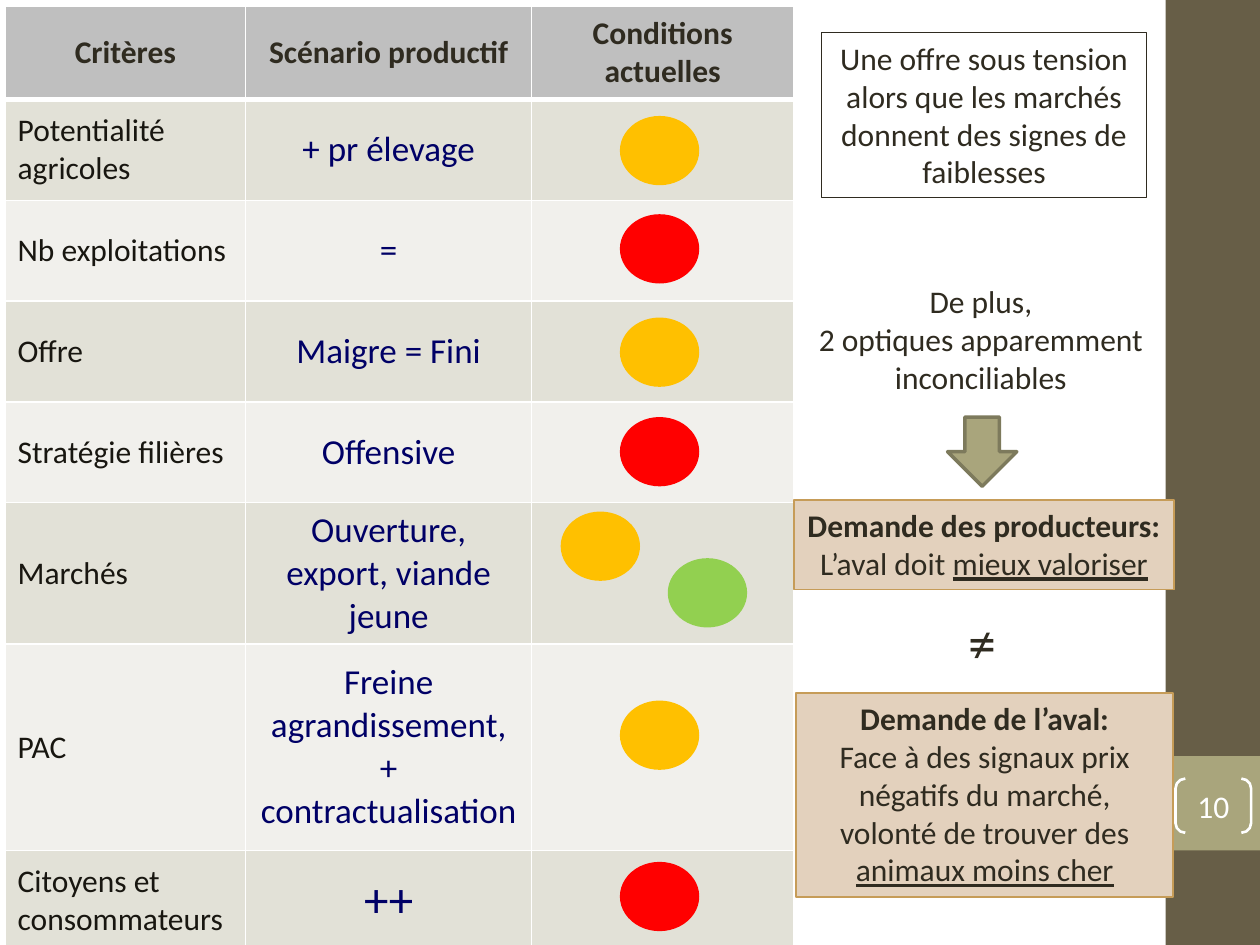
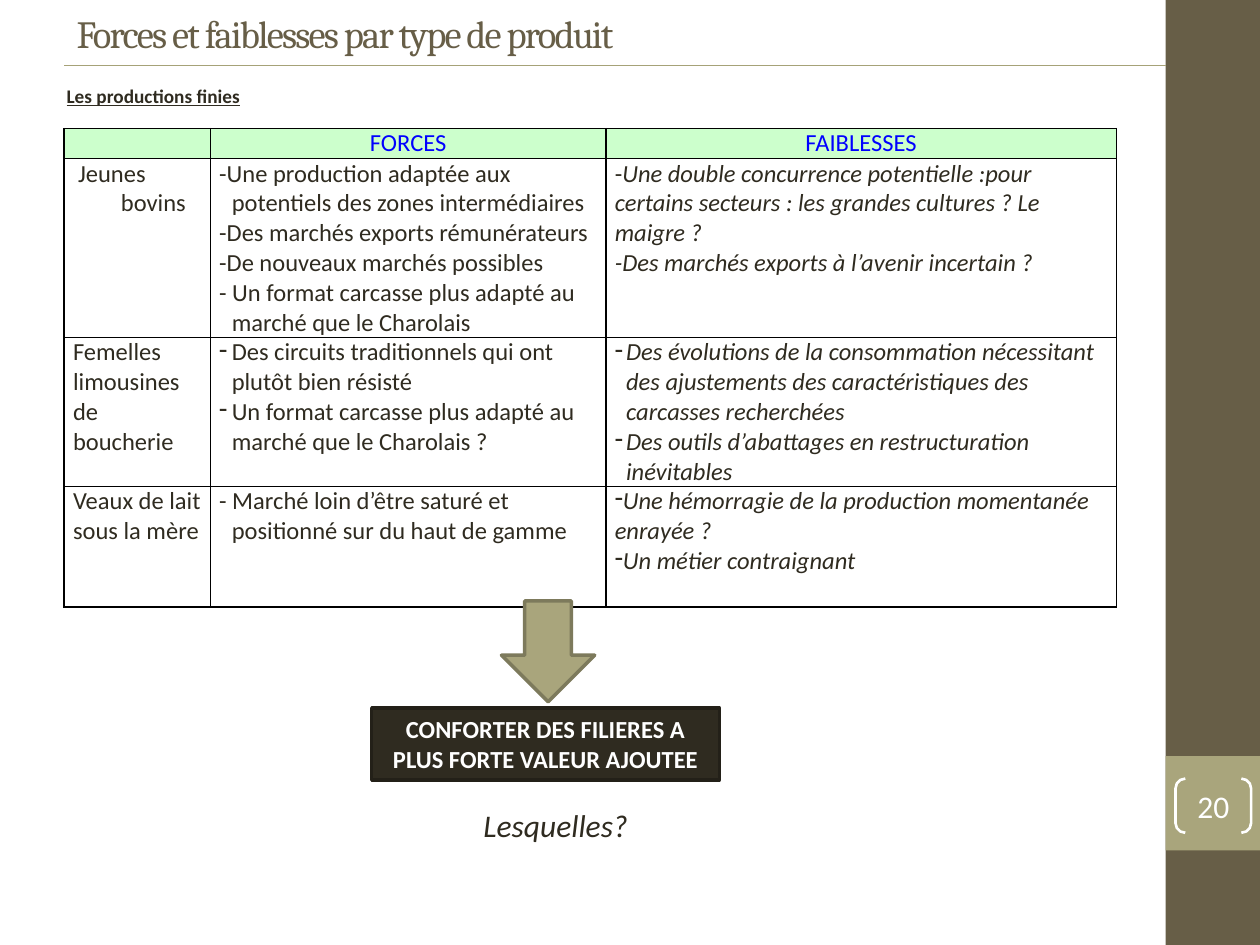
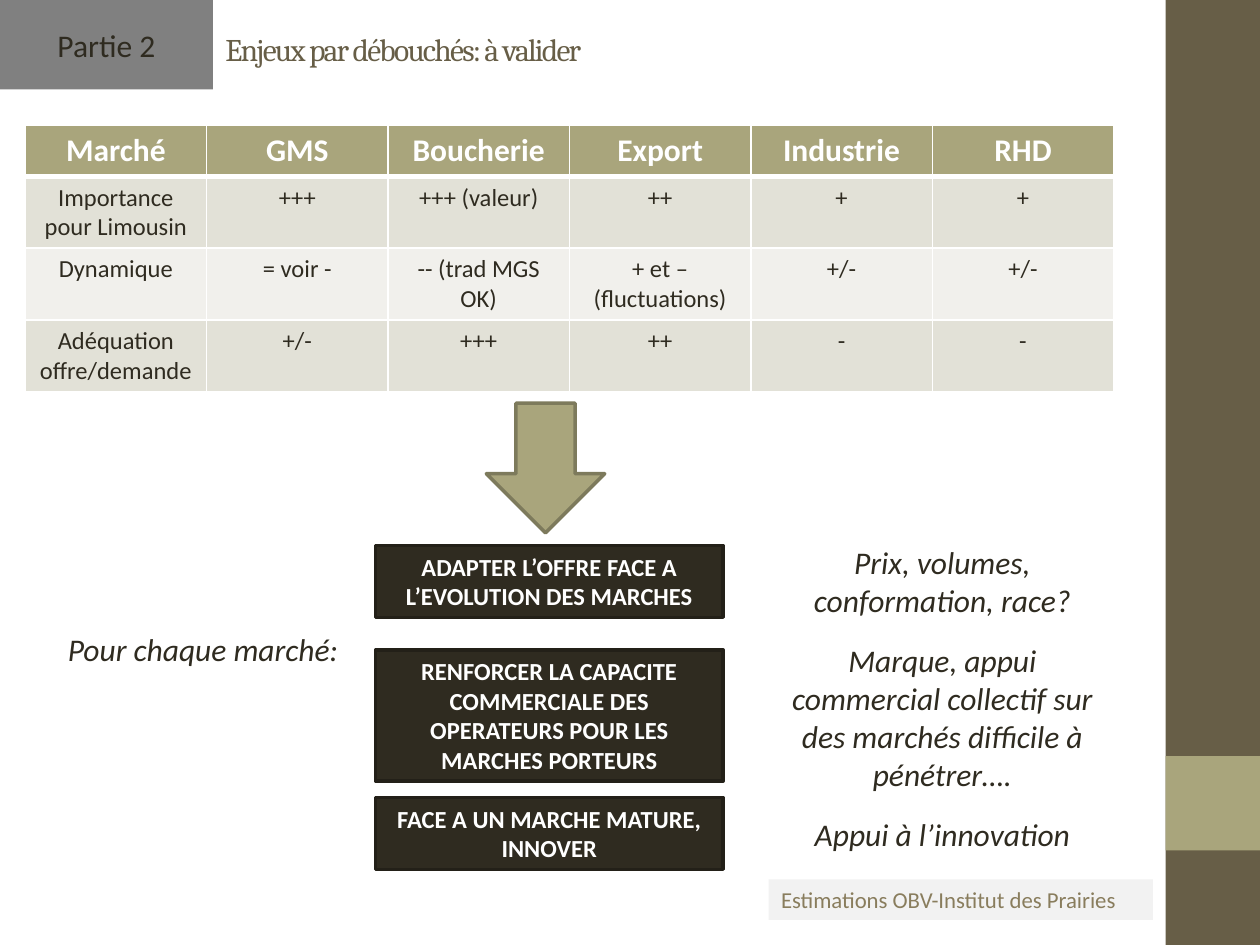
from dataclasses import dataclass, replace
from typing import Optional, Union

from lxml import etree
from pptx import Presentation, util as u
from pptx.dml.color import RGBColor
from pptx.enum import shapes, text
from pptx.oxml.ns import qn

INK, WHITE, BLACK = "2F2B20", "FFFFFF", "000000"
OLIVE, KHAKI, KHAKI_EDGE = "675E47", "A9A57C", "7D7A5C"
BANDS = ("E2E1D7", "F1F0EC")
AMBER, RED, GREEN = "FFC000", "FF0000", "92D050"
NAVY = "000066"

LEFT, CENTER = text.PP_ALIGN.LEFT, text.PP_ALIGN.CENTER
TOP, MIDDLE = text.MSO_ANCHOR.TOP, text.MSO_ANCHOR.MIDDLE
RECT, OVAL = shapes.MSO_SHAPE.RECTANGLE, shapes.MSO_SHAPE.OVAL
ARROW = shapes.MSO_SHAPE.DOWN_ARROW


@dataclass(frozen=True)
class Style:
    size: float = 18
    color: str = INK
    bold: bool = False
    italic: bool = False
    underline: bool = False
    font: str = "Calibri"
    align: int = CENTER
    spacing: float = 0


@dataclass(frozen=True)
class Span:
    text: str
    style: Style


@dataclass(frozen=True)
class Para:
    content: Union[str, tuple[Span, ...]]
    left: float = 0
    first: float = 0
    bullet: str = ""


@dataclass(frozen=True)
class Area:
    x: float
    y: float
    w: float
    h: float

    def lengths(self) -> tuple:
        return tuple(u.Inches(value) for value in (self.x, self.y, self.w, self.h))


@dataclass(frozen=True)
class Cell:
    content: Union[str, list]
    style: Style
    fill: Optional[str] = None


BODY = Style()
BOLD = Style(bold=True)
UNDERLINED = Style(underline=True)
COMMENT = Style(italic=True)
KEY_MESSAGE = Style(14, WHITE, bold=True)


def rgb(color: str) -> RGBColor:
    return RGBColor.from_string(color)


def format_span(span, style: Style) -> None:
    font = span.font
    font.size, font.name = u.Pt(style.size), style.font
    font.bold, font.italic, font.underline = style.bold, style.italic, style.underline
    font.color.rgb = rgb(style.color)
    if style.spacing:
        font._element.set("spc", str(int(style.spacing * 100)))


def write(frame, content: Union[str, list], style: Style) -> None:
    """Fill a text frame with one paragraph per item."""
    items = content if isinstance(content, list) else [content]
    for index, item in enumerate(items):
        para = frame.paragraphs[0] if index == 0 else frame.add_paragraph()
        spec_para = item if isinstance(item, Para) else Para(item)
        para.alignment = style.align
        properties = para._p.get_or_add_pPr()
        properties.set("marL", str(u.Inches(spec_para.left)))
        properties.set("indent", str(u.Inches(spec_para.first)))
        if spec_para.bullet:
            etree.SubElement(properties, qn("a:buChar")).set("char", spec_para.bullet)
        if isinstance(spec_para.content, tuple):
            for part in spec_para.content:
                span = para.add_run()
                span.text = part.text
                format_span(span, part.style)
        elif spec_para.content:
            para.text = spec_para.content
            format_span(para.runs[0], style)
        else:
            end = etree.SubElement(para._p, qn("a:endParaRPr"))
            end.set("sz", str(int(style.size * 100)))


def add_label(page, area: Area, content, style: Style = BODY, anchor=TOP, wrap: bool = True):
    box = page.shapes.add_textbox(*area.lengths())
    frame = box.text_frame
    frame.word_wrap, frame.vertical_anchor = wrap, anchor
    write(frame, content, style)


def add_figure(page, kind, area: Area, fill: Optional[str] = None, edge: Optional[str] = None,
               width: float = 1, content=None, style: Style = BODY, anchor=TOP, wrap: bool = True):
    shape = page.shapes.add_shape(kind, *area.lengths())
    shape.shadow.inherit = False
    if fill:
        shape.fill.solid()
        shape.fill.fore_color.rgb = rgb(fill)
    else:
        shape.fill.background()
    if edge:
        shape.line.color.rgb = rgb(edge)
        shape.line.width = u.Pt(width)
    else:
        shape.line.fill.background()
    if content:
        frame = shape.text_frame
        frame.word_wrap, frame.vertical_anchor = wrap, anchor
        write(frame, content, style)
    return shape


def add_arrow(page, area: Area) -> None:
    add_figure(page, ARROW, area, KHAKI, KHAKI_EDGE, 2)


def add_key_message(page, area: Area, message: str) -> None:
    add_figure(page, RECT, area, INK, "232018", 2, message, KEY_MESSAGE)


def add_title(page, area: Area, title: str, size: float) -> None:
    style = Style(size, OLIVE, font="Cambria", align=LEFT, spacing=-1)
    add_label(page, area, title, style, MIDDLE)


def add_border(cell, side: str, color: str, width: float) -> None:
    line = etree.SubElement(cell._tc.get_or_add_tcPr(), qn(f"a:ln{side}"))
    line.set("w", str(u.Pt(width)))
    solid = etree.SubElement(line, qn("a:solidFill"))
    etree.SubElement(solid, qn("a:srgbClr")).set("val", color)


def add_grid(page, x: float, y: float, widths: list[float], heights: list[float],
             rows: list[list[Cell]], border: str, header_rule: float = 1,
             anchor=TOP, margins: tuple[float, float] = (0.1, 0.05)) -> None:
    """Draw a table; header_rule is the width in points of the line below the header."""
    area = Area(x, y, sum(widths), sum(heights))
    table = page.shapes.add_table(len(rows), len(widths), *area.lengths()).table
    table.first_row = table.horz_banding = False
    for column, width in zip(table.columns, widths):
        column.width = u.Inches(width)
    for row, height in zip(table.rows, heights):
        row.height = u.Inches(height)
    for r, row in enumerate(rows):
        for c, item in enumerate(row):
            cell = table.cell(r, c)
            cell.vertical_anchor = anchor
            cell.margin_left = cell.margin_right = u.Inches(margins[0])
            cell.margin_top = cell.margin_bottom = u.Inches(margins[1])
            for side in "LRTB":
                on_rule = (r, side) in ((0, "B"), (1, "T"))
                add_border(cell, side, border, header_rule if on_rule else 1)
            if item.fill:
                cell.fill.solid()
                cell.fill.fore_color.rgb = rgb(item.fill)
            else:
                cell.fill.background()
            write(cell.text_frame, item.content, item.style)


def add_page(deck, number: Optional[int] = None):
    """Add a blank page with the side band and, if given, its page number."""
    page = deck.slides.add_slide(deck.slide_layouts[6])
    add_figure(page, RECT, Area(9.25, 0, 0.75, 7.5), OLIVE)
    add_figure(page, RECT, Area(9.25, 6, 0.75, 0.75), KHAKI)
    if number:
        bracket = add_figure(page, shapes.MSO_SHAPE.DOUBLE_BRACKET, Area(9.33, 6.18, 0.6, 0.43),
                             None, WHITE, 1.5, str(number), Style(color=WHITE), MIDDLE)
        bracket.adjustments[0] = 0.18
        frame = bracket.text_frame
        frame.margin_left = frame.margin_right = frame.margin_top = frame.margin_bottom = 0
    return page


def build_scenario(deck) -> None:
    page = add_page(deck, 10)
    criteria = [
        ("Potentialité agricoles", "+ pr élevage"),
        ("Nb exploitations", "="),
        ("Offre", "Maigre = Fini"),
        ("Stratégie filières", "Offensive"),
        ("Marchés", "Ouverture, export, viande jeune"),
        ("PAC", "Freine agrandissement, + contractualisation"),
        ("Citoyens et consommateurs", "++"),
    ]
    name_style = Style(color="181610", align=LEFT)
    headers = ("Critères", "Scénario productif", "Conditions actuelles")
    rows = [[Cell(header, BOLD, "BFBFBF") for header in headers]]
    for index, (name, scenario) in enumerate(criteria):
        fill = BANDS[index % 2]
        scenario_style = Style(28 if scenario == "++" else 20, NAVY)
        rows.append([Cell(name, name_style, fill), Cell(scenario, scenario_style, fill),
                     Cell("", BODY, fill)])
    add_grid(page, 0.04, 0.05, [1.91, 2.27, 2.08],
             [0.74, 0.8, 0.8, 0.8, 0.8, 1.12, 1.64, 0.8], rows, WHITE, 3, MIDDLE)

    lights = [(4.92, 0.92, AMBER), (4.92, 1.7, RED), (4.92, 2.52, AMBER), (4.92, 3.31, RED),
              (4.45, 4.06, AMBER), (5.3, 4.43, GREEN), (4.92, 5.56, AMBER), (4.92, 6.84, RED)]
    for x, y, color in lights:
        add_figure(page, OVAL, Area(x, y, 0.63, 0.55), color)

    add_figure(page, RECT, Area(6.52, 0.26, 2.58, 1.31), None, INK, 0.75,
               "Une offre sous tension alors que les marchés donnent des signes de faiblesses")
    add_label(page, Area(6.38, 2.19, 2.81, 1.01),
              ["De plus,", "2 optiques apparemment", "inconciliables"], wrap=False)
    add_arrow(page, Area(7.52, 3.31, 0.55, 0.55))
    demands = [
        (Area(6.3, 3.97, 3.02, 0.71), "Demande des producteurs:", "L’aval doit ",
         "mieux valoriser", False),
        (Area(6.32, 5.5, 2.99, 1.62), "Demande de l’aval:",
         "Face à des signaux prix négatifs du marché, volonté de trouver des ",
         "animaux moins cher", True),
    ]
    for area, heading, request, stress, wrap in demands:
        content = [Para((Span(heading, BOLD),)),
                   Para((Span(request, BODY), Span(stress, UNDERLINED)))]
        add_figure(page, RECT, area, "E3D1BD", "C69C58", 1, content, wrap=wrap)
    add_label(page, Area(7.58, 4.77, 0.43, 0.64), "≠", Style(32), wrap=False)


def build_strengths(deck) -> None:
    page = add_page(deck, 20)
    add_title(page, Area(0.51, 0, 8.33, 0.52), "Forces et faiblesses par type de produit", 22)
    rule = page.shapes.add_connector(shapes.MSO_CONNECTOR.STRAIGHT, u.Inches(0.51), u.Inches(0.52),
                                     u.Inches(9.25), u.Inches(0.52))
    rule.line.color.rgb = rgb("A6A278")
    rule.line.width = u.Pt(1)
    etree.SubElement(rule._element.spPr, qn("a:effectLst"))
    add_label(page, Area(0.43, 0.62, 2.44, 0.29), "Les productions finies",
              Style(11, bold=True, underline=True, align=LEFT))

    plain = Style(14, align=LEFT)
    italic = replace(plain, italic=True)
    products = [
        ([Para("Jeunes bovins", 0.38, -0.34)],
         [Para(line, 0.1, -0.1) for line in (
             "-Une production adaptée aux potentiels des zones intermédiaires",
             "-Des marchés exports rémunérateurs",
             "-De nouveaux marchés possibles",
             "- Un format carcasse plus adapté au marché que le Charolais")],
         [Para((Span("-", plain), Span(
             "Une double concurrence potentielle :pour certains secteurs : "
             "les grandes cultures ? Le maigre ?", italic))),
          "-Des marchés exports à l’avenir incertain ?"]),
        ("Femelles limousines de boucherie",
         [Para(line, 0.1, -0.1, "-") for line in (
             "Des circuits traditionnels qui ont plutôt bien résisté",
             "Un format carcasse plus adapté au marché que le Charolais ?")],
         [Para(line, 0.09, -0.09, "-") for line in (
             "Des évolutions de la consommation nécessitant des ajustements "
             "des caractéristiques des carcasses recherchées",
             "Des outils d’abattages en restructuration inévitables")]),
        ("Veaux de lait sous la mère",
         [Para("- Marché loin d’être saturé et positionné sur du haut de gamme", 0.1, -0.1)],
         [Para(line, bullet="-") for line in (
             "Une hémorragie de la production momentanée enrayée ?",
             "Un métier contraignant")]),
    ]
    header_style = Style(14, "0000FF")
    rows = [[Cell(header, header_style, "CCFFCC") for header in ("", "FORCES", "FAIBLESSES")]]
    rows += [[Cell(name, plain), Cell(strengths, plain), Cell(weaknesses, italic)]
             for name, strengths, weaknesses in products]
    add_grid(page, 0.51, 1.02, [1.16, 3.14, 4.05], [0.24, 1.42, 1.18, 0.96], rows, BLACK,
             margins=(0.07, 0))

    add_key_message(page, Area(2.95, 5.62, 2.76, 0.57),
                    "CONFORTER DES FILIERES A PLUS FORTE VALEUR AJOUTEE")
    add_arrow(page, Area(3.98, 4.77, 0.74, 0.8))
    add_label(page, Area(3.03, 6.35, 2.76, 0.4), "Lesquelles?", COMMENT)


def build_outlets(deck) -> None:
    page = add_page(deck)
    add_title(page, Area(1.69, 0.13, 7.72, 0.51), "Enjeux par débouchés: à valider", 18)
    add_figure(page, RECT, Area(0, 0, 1.69, 0.71), "808080", content="Partie 2", anchor=MIDDLE)
    add_figure(page, RECT, Area(6.1, 6.98, 3.05, 0.32), "F2F2F2",
               content="Estimations OBV-Institut des Prairies",
               style=Style(13, "897D5D", align=LEFT))

    headers = ("Marché", "GMS", "Boucherie", "Export", "Industrie", "RHD")
    outlets = [
        ("Importance pour Limousin", "+++", "+++ (valeur)", "++", "+", "+"),
        ("Dynamique", "= voir -", "-- (trad MGS OK)", "+ et – (fluctuations)", "+/-", "+/-"),
        ("Adéquation offre/demande", "+/-", "+++", "++", "-", "-"),
    ]
    rows = [[Cell(header, Style(color=WHITE, bold=True), KHAKI) for header in headers]]
    rows += [[Cell(value, Style(14), BANDS[index % 2]) for value in values]
             for index, values in enumerate(outlets)]
    add_grid(page, 0.2, 0.99, [1.44] * 6, [0.41] + [0.57] * 3, rows, WHITE, 3)

    add_arrow(page, Area(3.86, 3.2, 0.94, 1.03))
    add_label(page, Area(0.44, 4.95, 2.37, 0.4), "Pour chaque marché:",
              replace(COMMENT, align=LEFT), wrap=False)
    challenges = [
        (4.33, 0.57, "ADAPTER L’OFFRE FACE A L’EVOLUTION DES MARCHES",
         4.26, 0.71, "Prix, volumes, conformation, race?"),
        (5.16, 1.04, "RENFORCER LA CAPACITE COMMERCIALE DES OPERATEURS POUR LES MARCHES PORTEURS",
         5.04, 1.31, "Marque, appui commercial collectif sur des marchés difficile à pénétrer…."),
        (6.33, 0.57, "FACE A UN MARCHE MATURE, INNOVER", 6.42, 0.4, "Appui à l’innovation"),
    ]
    for message_y, message_h, message, comment_y, comment_h, comment in challenges:
        add_key_message(page, Area(2.98, message_y, 2.76, message_h), message)
        add_label(page, Area(6.1, comment_y, 2.76, comment_h), comment, COMMENT)


def main() -> None:
    deck = Presentation()
    deck.slide_width, deck.slide_height = u.Inches(10), u.Inches(7.5)
    build_scenario(deck)
    build_strengths(deck)
    build_outlets(deck)
    deck.save("out.pptx")


if __name__ == "__main__":
    main()
